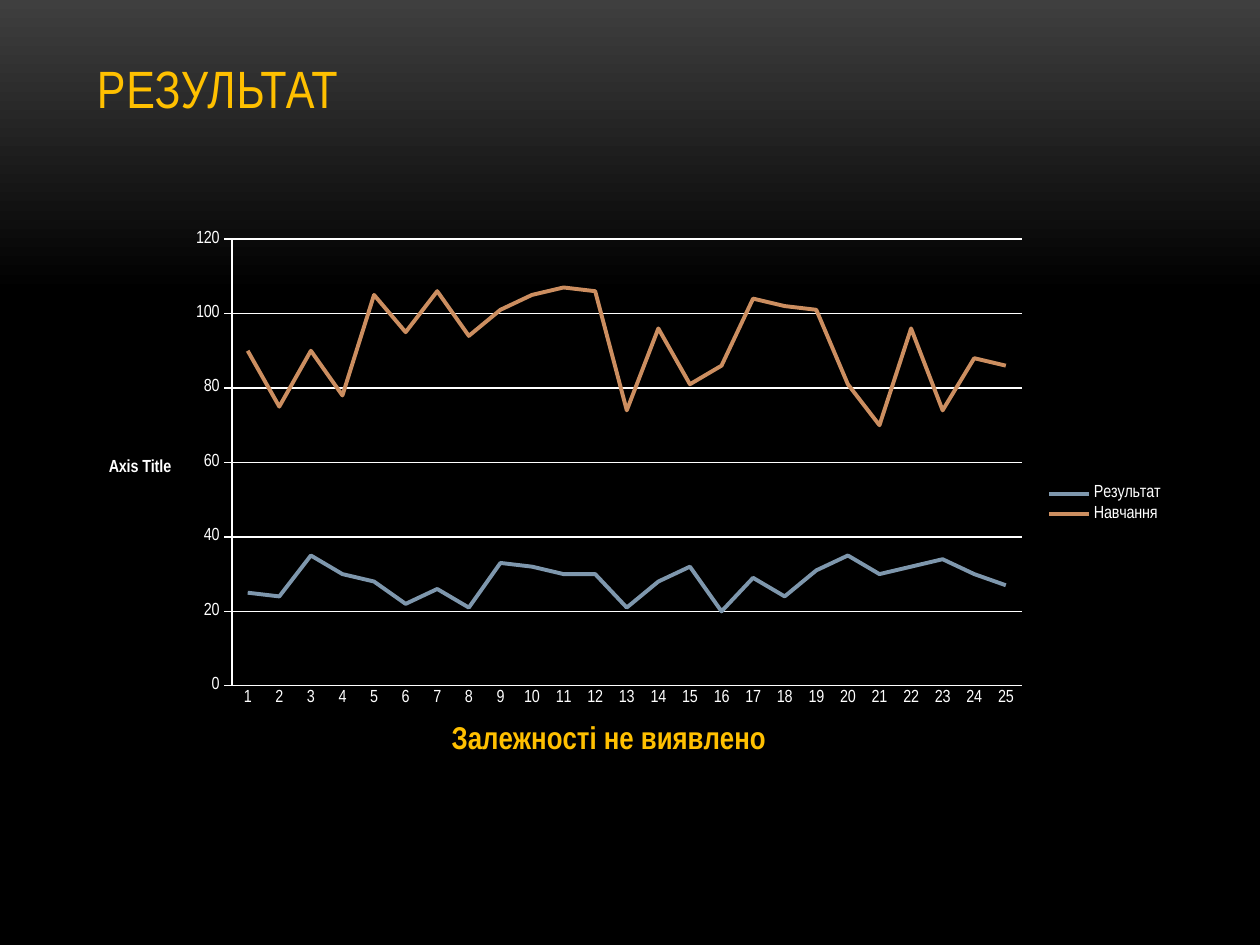
import copy

import pptx
import pptx.chart.data
import pptx.dml.color
import pptx.enum.chart
import pptx.enum.text
import pptx.oxml
import pptx.oxml.ns
import pptx.util
from pptx.util import Inches

FONT = "Arial Narrow"
WHITE = "FFFFFF"
GOLD = "FFC000"
SERIES = [
    ("Результат", "7E97AD",
     [25, 24, 35, 30, 28, 22, 26, 21, 33, 32, 30, 30, 21,
      28, 32, 20, 29, 24, 31, 35, 30, 32, 34, 30, 27]),
    ("Навчання", "CC8E60",
     [90, 75, 90, 78, 105, 95, 106, 94, 101, 105, 107, 106, 74,
      96, 81, 86, 104, 102, 101, 81, 70, 96, 74, 88, 86]),
]


def color(hex_value):
    return pptx.dml.color.RGBColor.from_string(hex_value)


def style_font(font, size, hex_value, bold=False):
    font.name = FONT
    font.size = pptx.util.Pt(size)
    font.bold = bold
    font.color.rgb = color(hex_value)


def style_line(line, hex_value, width):
    line.color.rgb = color(hex_value)
    line.width = pptx.util.Pt(width)


def paint_background(slide):
    fill = slide.background.fill
    fill.gradient()
    fill.gradient_angle = 270
    # A third stop keeps the lower part of the slide black
    stop_list = fill._fill._gradFill.find(pptx.oxml.ns.qn("a:gsLst"))
    stop_list.append(copy.deepcopy(stop_list[-1]))
    stops = [(0, "3F3F3F"), (0.31, "000000"), (1, "000000")]
    for stop, (position, hex_value) in zip(fill.gradient_stops, stops):
        stop.position = position
        stop.color.rgb = color(hex_value)


def add_title(slide, left, top, width, height):
    frame = slide.shapes.add_textbox(left, top, width, height).text_frame
    frame.word_wrap = True
    frame.vertical_anchor = pptx.enum.text.MSO_ANCHOR.BOTTOM
    run = frame.paragraphs[0].add_run()
    run.text = "РЕЗУЛЬТАТ"
    style_font(run.font, 30, GOLD)
    run._r.get_or_add_rPr().set("spc", "50")


def add_axis_title(axis, text, size, hex_value):
    frame = axis.axis_title.text_frame
    run = frame.paragraphs[0].add_run()
    run.text = text
    style_font(run.font, size, hex_value, bold=True)
    # Keep the title horizontal on either axis
    body = frame._txBody.find(pptx.oxml.ns.qn("a:bodyPr"))
    body.set("rot", "0")
    body.set("vert", "horz")


def place_plot(chart, left, top, width, height):
    """Fix the inner plot area, in fractions of the chart."""
    plot_area = chart._chartSpace.chart.plotArea
    for layout in plot_area.findall(pptx.oxml.ns.qn("c:layout")):
        plot_area.remove(layout)
    edges = "".join(
        f'<c:{name} val="{value}"/>'
        for name, value in (("x", left), ("y", top), ("w", width), ("h", height)))
    plot_area.insert(0, pptx.oxml.parse_xml(
        f'<c:layout {pptx.oxml.ns.nsdecls("c")}><c:manualLayout>'
        '<c:layoutTarget val="inner"/><c:xMode val="edge"/><c:yMode val="edge"/>'
        f'{edges}</c:manualLayout></c:layout>'))


def add_line_chart(slide, left, top, width, height):
    data = pptx.chart.data.CategoryChartData()
    data.categories = [str(number) for number in range(1, 26)]
    for name, _, values in SERIES:
        data.add_series(name, values)
    chart = slide.shapes.add_chart(
        pptx.enum.chart.XL_CHART_TYPE.LINE, left, top, width, height, data).chart
    chart.has_title = False
    style_font(chart.font, 10, WHITE)
    place_plot(chart, 0.135, 0.033, 0.723, 0.788)

    # Series
    chart.plots[0].vary_by_categories = False
    for series, (_, hex_value, _) in zip(chart.plots[0].series, SERIES):
        series.smooth = False
        style_line(series.format.line, hex_value, 2.25)

    # Axes
    tick_mark = pptx.enum.chart.XL_TICK_MARK
    for axis, mark in ((chart.category_axis, tick_mark.NONE),
                       (chart.value_axis, tick_mark.OUTSIDE)):
        axis.major_tick_mark = mark
        axis.minor_tick_mark = tick_mark.NONE
        style_line(axis.format.line, WHITE, 0.75)
    value_axis = chart.value_axis
    value_axis.minimum_scale = 0
    value_axis.maximum_scale = 120
    value_axis.major_unit = 20
    value_axis.has_major_gridlines = True
    style_line(value_axis.major_gridlines.format.line, WHITE, 0.75)
    add_axis_title(chart.category_axis, "Залежності не виявлено", 18, GOLD)
    add_axis_title(value_axis, "Axis Title", 10, WHITE)

    # Legend
    chart.has_legend = True
    chart.legend.position = pptx.enum.chart.XL_LEGEND_POSITION.RIGHT
    chart.legend.include_in_layout = False
    style_font(chart.legend.font, 10, WHITE)


def main():
    presentation = pptx.Presentation()
    presentation.slide_width = Inches(10)
    presentation.slide_height = Inches(7.5)
    slide = presentation.slides.add_slide(presentation.slide_layouts[6])
    paint_background(slide)
    add_title(slide, Inches(0.67), Inches(0.3), Inches(8.66), Inches(0.69))
    add_line_chart(slide, Inches(0.67), Inches(1.75), Inches(8.67), Inches(4.5))
    presentation.save("out.pptx")


if __name__ == "__main__":
    main()
